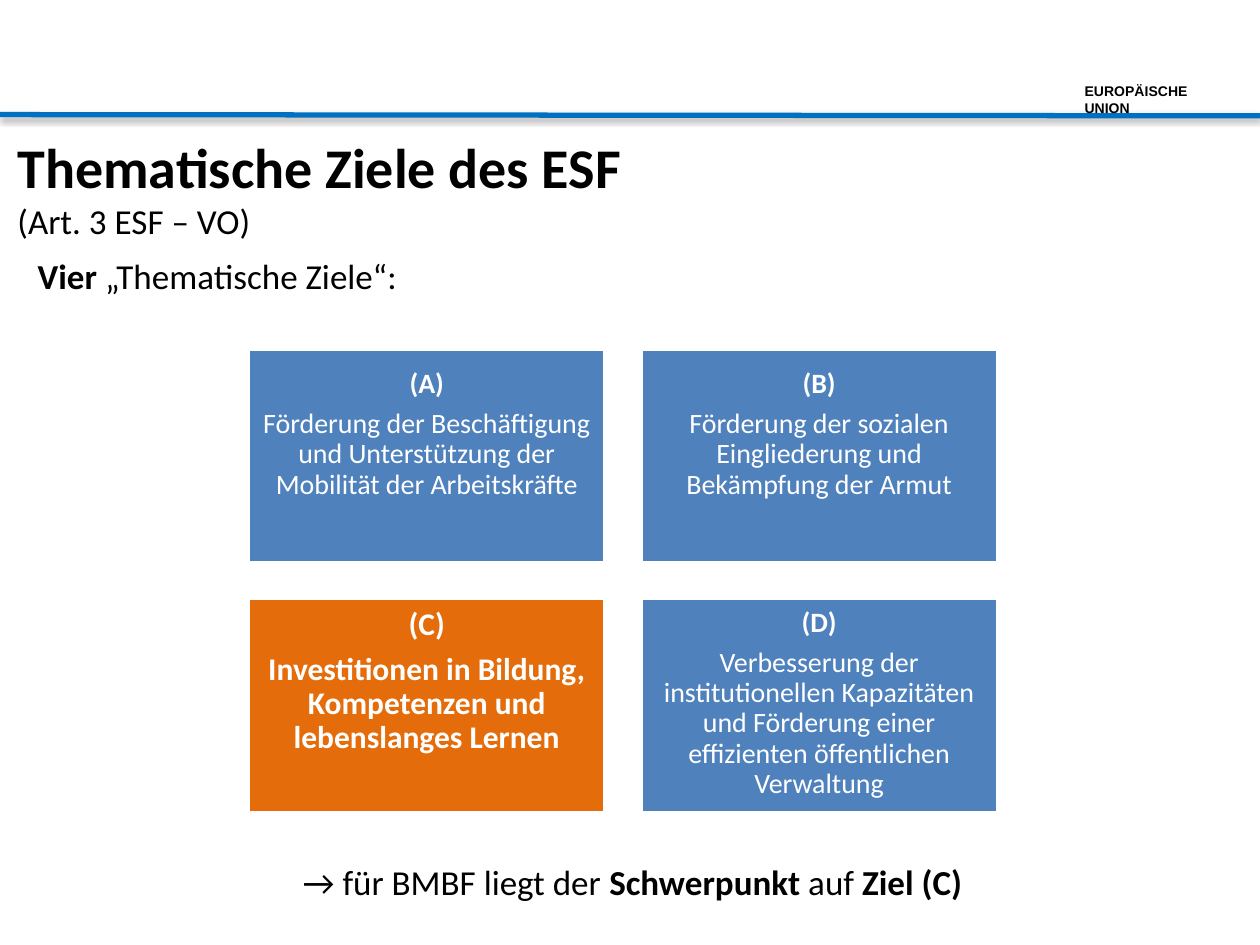
from lxml.etree import SubElement
from pptx import Presentation
from pptx.dml.color import RGBColor
from pptx.enum.shapes import MSO_CONNECTOR, MSO_SHAPE
from pptx.enum.text import MSO_ANCHOR, PP_ALIGN
from pptx.oxml.ns import qn
from pptx.util import Pt


def color(value):
    return RGBColor.from_string(value)


def add_runs(paragraph, runs, size, ink="000000", font="Calibri"):
    for words, bold in runs:
        run = paragraph.add_run()
        run.text = words
        run.font.name = font
        run.font.size = Pt(size)
        run.font.bold = bold
        run.font.color.rgb = color(ink)


deck = Presentation()
deck.slide_width, deck.slide_height = Pt(720), Pt(540)
slide = deck.slides.add_slide(deck.slide_layouts[6])
shapes = slide.shapes

header_rule = shapes.add_connector(MSO_CONNECTOR.STRAIGHT, Pt(0), Pt(65.5), Pt(720), Pt(66.2))
header_rule.line.color.rgb = color("0070C0")
header_rule.line.width = Pt(3)
effects = SubElement(header_rule._element.spPr, qn("a:effectLst"))
shadow = SubElement(effects, qn("a:outerShdw"), blurRad=str(Pt(3.1)), dist=str(Pt(1.8)),
                    dir="5400000", rotWithShape="0")
shadow_color = SubElement(shadow, qn("a:srgbClr"), val="000000")
SubElement(shadow_color, qn("a:alpha"), val="35000")

LEFT, CENTER = PP_ALIGN.LEFT, PP_ALIGN.CENTER
captions = [
    (612.7, 43.9, 90.7, 18.7, True, LEFT, "Arial", [(8, [("EUROPÄISCHE UNION", True)])]),
    (2.9, 72, 362.9, 70.6, False, LEFT, "Calibri",
     [(32, [("Thematische Ziele des ESF", True)]), (20, [("(Art. 3 ESF – VO)", False)])]),
    (14.4, 141.8, 224.6, 31.7, False, LEFT, "Calibri",
     [(20, [("Vier ", True), ("„Thematische Ziele“:", False)])]),
    (2.9, 488.2, 717.1, 31.7, True, CENTER, "Calibri",
     [(20, [("→ für BMBF liegt der ", False), ("Schwerpunkt ", True),
            ("auf ", False), ("Ziel (C)", True)])]),
]
for left, top, width, height, wrap, align, font, lines in captions:
    frame = shapes.add_textbox(Pt(left), Pt(top), Pt(width), Pt(height)).text_frame
    frame.word_wrap = wrap
    for index, (size, runs) in enumerate(lines):
        paragraph = frame.add_paragraph() if index else frame.paragraphs[0]
        paragraph.alignment = align
        add_runs(paragraph, runs, size, font=font)

BLUE, ORANGE = "4F81BD", "E46C0A"
goals = [
    ("(A)", "Förderung der Beschäftigung und Unterstützung der Mobilität der Arbeitskräfte",
     BLUE, 16, False, 11.7),
    ("(B)", "Förderung der sozialen Eingliederung und Bekämpfung der Armut",
     BLUE, 16, False, 11.7),
    ("(C)", "Investitionen in Bildung, Kompetenzen und lebenslanges Lernen",
     ORANGE, 18, True, 5.5),
    ("(D)", "Verbesserung der institutionellen Kapazitäten und Förderung einer "
     "effizienten öffentlichen Verwaltung", BLUE, 16, False, 5.5),
]
for index, (letter, goal, fill, size, bold, top_inset) in enumerate(goals):
    row, column = divmod(index, 2)
    card = shapes.add_shape(MSO_SHAPE.RECTANGLE, Pt(142 + 224.2 * column),
                            Pt(199.5 + 142.6 * row), Pt(203.8), Pt(122.4))
    card.shadow.inherit = False
    card.fill.solid()
    card.fill.fore_color.rgb = color(fill)
    card.line.color.rgb = color("FFFFFF")
    card.line.width = Pt(2)
    frame = card.text_frame
    frame.word_wrap = True
    frame.vertical_anchor = MSO_ANCHOR.TOP
    frame.margin_left = frame.margin_right = frame.margin_bottom = Pt(5)
    frame.margin_top = Pt(top_inset)
    heading, body = frame.paragraphs[0], frame.add_paragraph()
    for paragraph, words, weight in ((heading, letter, True), (body, goal, bold)):
        paragraph.alignment = CENTER
        paragraph.line_spacing = 0.9
        add_runs(paragraph, [(words, weight)], size, "FFFFFF")
    heading.space_after = Pt(0.35 * size)

deck.save("out.pptx")
